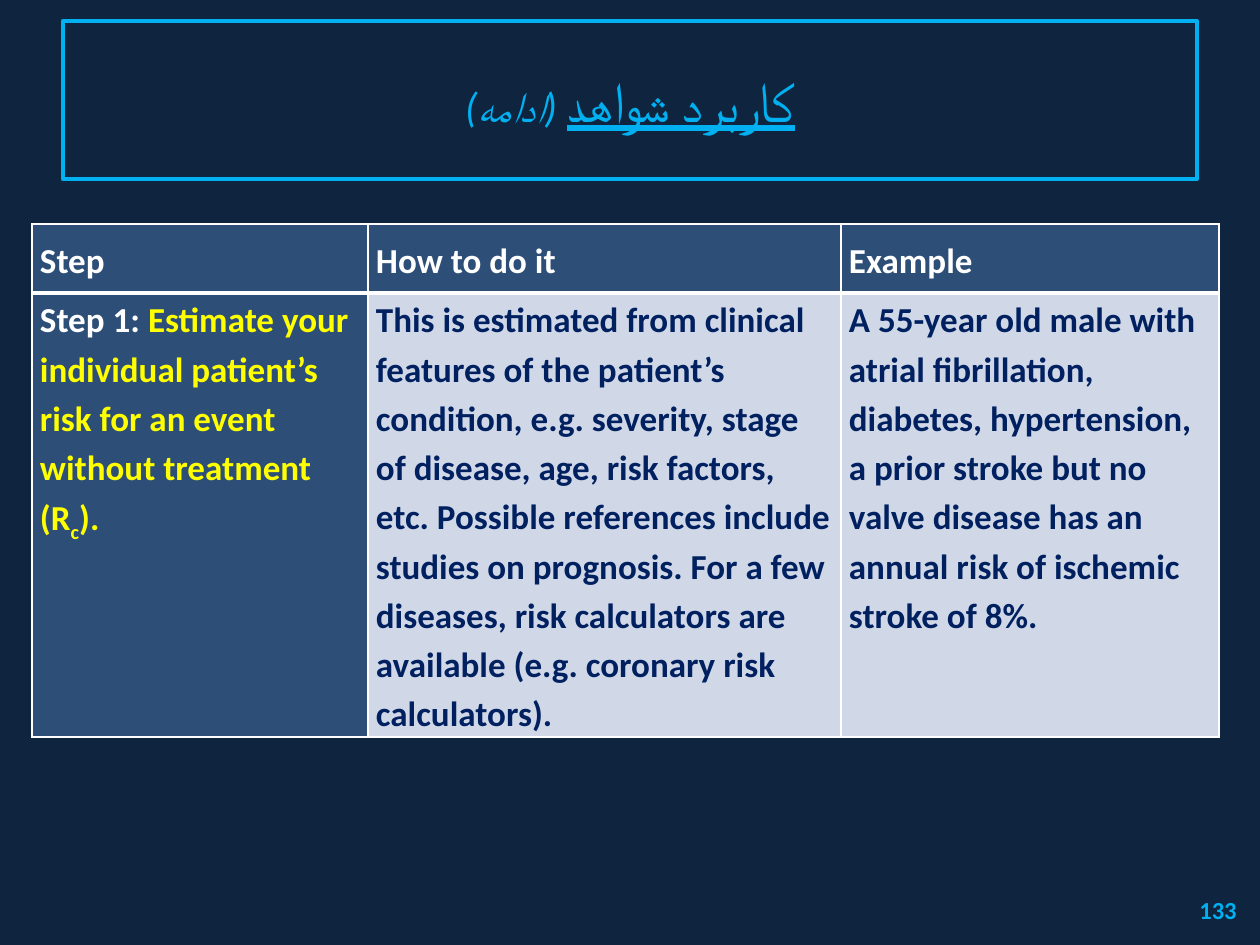
import dataclasses

import lxml.etree
import pptx
import pptx.dml.color
import pptx.enum.shapes
import pptx.enum.text
import pptx.oxml
import pptx.oxml.ns
import pptx.util

PX = 914400 / 126
ALIGN = pptx.enum.text.PP_ALIGN
ANCHOR = pptx.enum.text.MSO_ANCHOR


@dataclasses.dataclass(frozen=True)
class Theme:
    font: str = "Calibri"
    background: str = "0F243E"
    accent: str = "00B0F0"
    white: str = "FFFFFF"
    highlight: str = "FFFF00"
    ink: str = "002060"
    dark_fill: str = "2D4E77"
    light_fill: str = "D0D8E8"
    title_size: int = 32
    subtitle_size: int = 24
    table_size: int = 20
    number_size: int = 14


THEME = Theme()

HEADINGS = ["Step", "How to do it", "Example"]
STEP = [
    ("Step 1: ", THEME.white, 0),
    ("Estimate your individual patient’s risk for an event without treatment (R",
     THEME.highlight, 0),
    ("c", THEME.highlight, -25000),
    (").", THEME.highlight, 0),
]
METHOD = (
    "This is estimated from clinical features of the patient’s condition, "
    "e.g. severity, stage of disease, age, risk factors, etc. Possible references "
    "include studies on prognosis. For a few diseases, risk calculators are "
    "available (e.g. coronary risk calculators)."
)
EXAMPLE = (
    "A 55-year old male with atrial fibrillation, diabetes, hypertension, "
    "a prior stroke but no valve disease has an annual risk of ischemic stroke of 8%."
)


def px(length):
    return pptx.util.Emu(round(length * PX))


def rgb(color):
    return pptx.dml.color.RGBColor.from_string(color)


def set_format(target, **values):
    for name, value in values.items():
        setattr(target, name, value)


def add_run(paragraph, text, color, size, baseline=0, **font_values):
    run = paragraph.add_run()
    run.text = text
    set_format(run.font, name=THEME.font, size=pptx.util.Pt(size), **font_values)
    run.font.color.rgb = rgb(color)
    properties = run.font._element
    complex_script = lxml.etree.SubElement(properties, pptx.oxml.ns.qn("a:cs"))
    complex_script.set("typeface", THEME.font)
    if baseline:
        properties.set("baseline", str(baseline))


def right_to_left(frame, alignment):
    """Prepare a middle-anchored frame and return its right-to-left paragraph."""
    set_format(frame, word_wrap=True, vertical_anchor=ANCHOR.MIDDLE)
    paragraph = frame.paragraphs[0]
    paragraph.alignment = alignment
    paragraph._p.get_or_add_pPr().set("rtl", "1")
    return paragraph


def add_title(slide, box):
    banner = slide.shapes.add_shape(
        pptx.enum.shapes.MSO_SHAPE.RECTANGLE, *map(px, box))
    banner.shadow.inherit = False
    banner.fill.background()
    banner.line.color.rgb = rgb(THEME.accent)
    banner.line.width = pptx.util.Pt(2.5)
    heading = right_to_left(banner.text_frame, ALIGN.CENTER)
    add_run(heading, "کاربرد شواهد", THEME.accent, THEME.title_size, underline=True)
    add_run(heading, " (ادامه)", THEME.accent, THEME.subtitle_size, italic=True)


def add_page_number(slide, box):
    number = slide.shapes.add_textbox(*map(px, box))
    paragraph = right_to_left(number.text_frame, ALIGN.RIGHT)
    add_run(paragraph, "133", THEME.accent, THEME.number_size, bold=True)


def add_borders(cell, bottom_width):
    properties = cell._tc.get_or_add_tcPr()
    widths = {"lnL": 1, "lnR": 1, "lnT": 1, "lnB": bottom_width}
    for position, (side, width) in enumerate(widths.items()):
        border = pptx.oxml.parse_xml(
            f'<a:{side} {pptx.oxml.ns.nsdecls("a")} w="{pptx.util.Pt(width)}">'
            f'<a:solidFill><a:srgbClr val="{THEME.white}"/></a:solidFill></a:{side}>')
        properties.insert(position, border)


def fill_cell(cell, runs, fill, anchor, bottom_width):
    set_format(cell, vertical_anchor=anchor, margin_left=px(8), margin_right=px(8),
               margin_top=0, margin_bottom=0)
    cell.fill.solid()
    cell.fill.fore_color.rgb = rgb(fill)
    add_borders(cell, bottom_width)
    paragraph = cell.text_frame.paragraphs[0]
    paragraph.line_spacing = 1.15
    for text, color, baseline in runs:
        add_run(paragraph, text, color, THEME.table_size, baseline, bold=True)


def add_steps_table(slide, box):
    left, top, width, height = box
    header_height = 69
    column_widths = [336, 473, width - 336 - 473]
    table = slide.shapes.add_table(2, len(column_widths), *map(px, box)).table
    for column, column_width in zip(table.columns, column_widths):
        column.width = px(column_width)
    for row, row_height in zip(table.rows, [header_height, height - header_height]):
        row.height = px(row_height)
    for cell, heading in zip(table.rows[0].cells, HEADINGS):
        fill_cell(cell, [(heading, THEME.white, 0)], THEME.dark_fill, ANCHOR.MIDDLE, 3)
    details = [
        (STEP, THEME.dark_fill),
        ([(METHOD, THEME.ink, 0)], THEME.light_fill),
        ([(EXAMPLE, THEME.ink, 0)], THEME.light_fill),
    ]
    for cell, (runs, fill) in zip(table.rows[1].cells, details):
        fill_cell(cell, runs, fill, ANCHOR.TOP, 1)
    for cell in table.rows[1].cells:
        top_border = cell._tc.tcPr.find(pptx.oxml.ns.qn("a:lnT"))
        top_border.set("w", str(pptx.util.Pt(3)))


def main():
    presentation = pptx.Presentation()
    set_format(presentation, slide_width=px(1260), slide_height=px(945))
    slide = presentation.slides.add_slide(presentation.slide_layouts[6])
    slide.background.fill.solid()
    slide.background.fill.fore_color.rgb = rgb(THEME.background)
    add_title(slide, (63, 21, 1134, 158))
    add_page_number(slide, (955, 885, 294, 50))
    add_steps_table(slide, (32, 224, 1187, 513))
    presentation.save("out.pptx")


if __name__ == "__main__":
    main()
